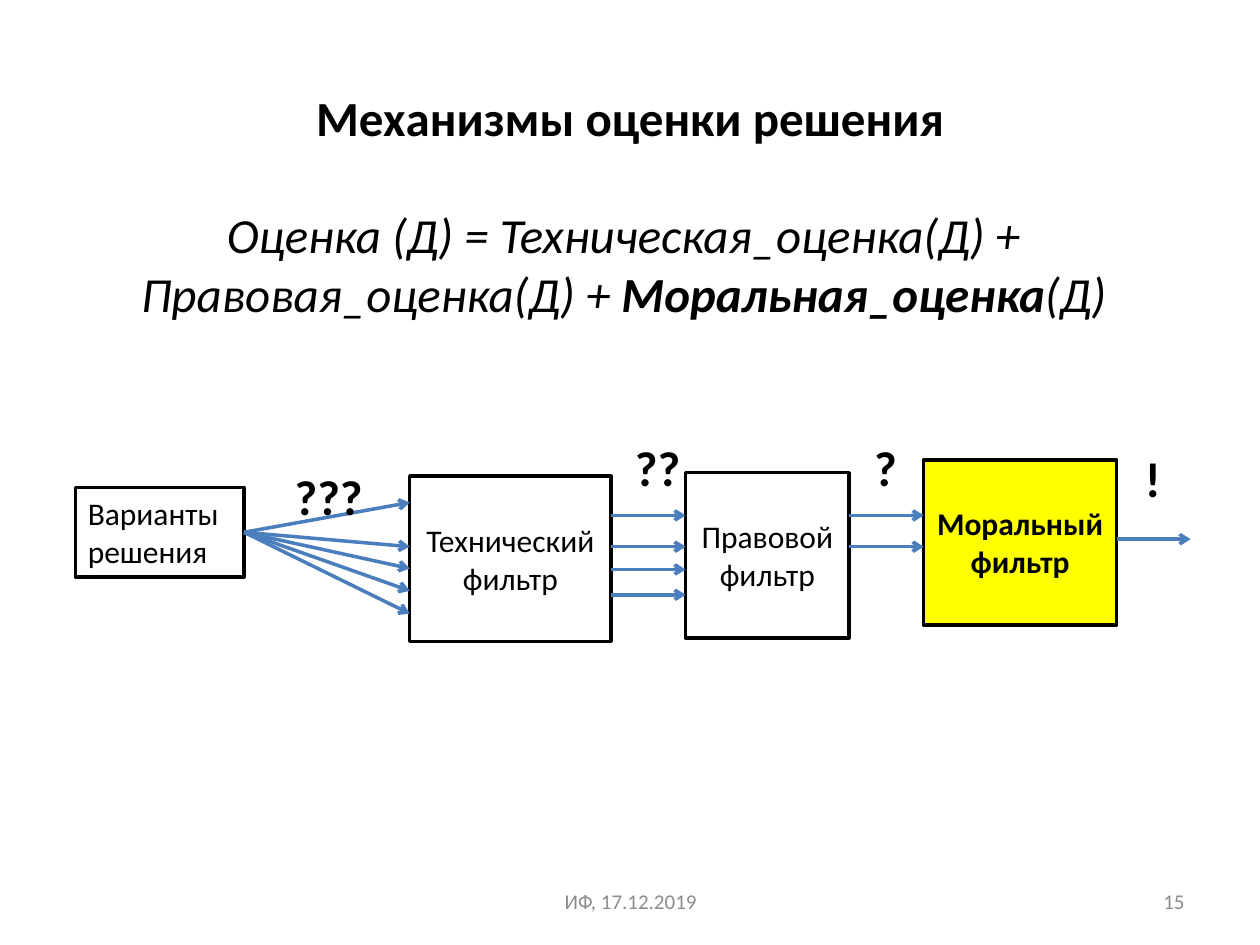
"""Build the slide on the mechanisms of evaluating a decision."""
from lxml.etree import SubElement
from pptx import Presentation
from pptx.dml.color import RGBColor
from pptx.enum.shapes import MSO_CONNECTOR, MSO_SHAPE
from pptx.enum.text import MSO_ANCHOR, PP_ALIGN
from pptx.oxml.ns import qn
from pptx.util import Cm, Pt

BLACK = RGBColor(0x00, 0x00, 0x00)
WHITE = RGBColor(0xFF, 0xFF, 0xFF)
YELLOW = RGBColor(0xFF, 0xFF, 0x00)
BLUE = RGBColor(0x4B, 0x7E, 0xBC)
GRAY = RGBColor(0x8C, 0x8C, 0x8C)


class FilterSlide:
    font = "Calibri"
    line_width = Pt(2)

    def __init__(self, slide):
        self.slide = slide

    def format(self, frame, size, color=BLACK, bold=False, align=PP_ALIGN.CENTER):
        for paragraph in frame.paragraphs:
            paragraph.alignment = align
            for run in paragraph.runs:
                run.font.name = self.font
                run.font.size = Pt(size)
                run.font.bold = bold
                run.font.color.rgb = color

    def place(self, holder, area):
        holder.left, holder.top, holder.width, holder.height = map(Cm, area)

    def title(self, text, area):
        heading = self.slide.shapes.title
        self.place(heading, area)
        heading.text_frame.text = text
        self.format(heading.text_frame, 28, bold=True)

    def formula(self, parts, area):
        body = self.slide.placeholders[1]
        self.place(body, area)
        paragraph = body.text_frame.paragraphs[0]
        for part in parts:
            paragraph.add_run().text = part
        self.format(body.text_frame, 28)
        for run in paragraph.runs:
            run.font.italic = True
        paragraph.runs[1].font.bold = True
        properties = paragraph._p.get_or_add_pPr()
        properties.set("marL", "0")
        properties.set("indent", "0")
        SubElement(properties, qn("a:buNone"))

    def label(self, text, area, size, color=BLACK, bold=False, align=PP_ALIGN.LEFT,
              anchor=MSO_ANCHOR.TOP, wrap=False):
        frame = self.slide.shapes.add_textbox(*map(Cm, area)).text_frame
        frame.word_wrap = wrap
        frame.vertical_anchor = anchor
        frame.text = text
        self.format(frame, size, color, bold, align)

    def box(self, text, area, fill=WHITE, bold=False, align=PP_ALIGN.CENTER,
            side_margin=0.1, top_margin=0.9):
        block = self.slide.shapes.add_shape(MSO_SHAPE.RECTANGLE, *map(Cm, area))
        block.shadow.inherit = False
        block.fill.solid()
        block.fill.fore_color.rgb = fill
        block.line.color.rgb = BLACK
        block.line.width = self.line_width
        frame = block.text_frame
        frame.word_wrap = True
        frame.vertical_anchor = MSO_ANCHOR.TOP
        frame.margin_left = frame.margin_right = Cm(side_margin)
        frame.margin_top = Cm(top_margin)
        frame.text = text
        self.format(frame, 18, bold=bold, align=align)
        return block

    def arrow(self, start, end, source=None):
        flow = self.slide.shapes.add_connector(
            MSO_CONNECTOR.STRAIGHT, *map(Cm, (*start, *end)))
        if source is not None:
            flow.begin_connect(source, 3)
        flow.line.color.rgb = BLUE
        flow.line.width = self.line_width
        SubElement(flow.line._get_or_add_ln(), qn("a:tailEnd"), type="arrow")
        SubElement(flow._element.spPr, qn("a:effectLst"))


def main():
    deck = Presentation()
    deck.slide_width, deck.slide_height = Cm(25.4), Cm(19.05)
    page = FilterSlide(deck.slides.add_slide(deck.slide_layouts[1]))

    page.title("Механизмы оценки решения", (1.27, 0.76, 22.86, 3.18))
    page.formula(("Оценка (Д) = Техническая_оценка(Д) + Правовая_оценка(Д) + ",
                  "Моральная_оценка", "(Д)"), (1.14, 3.99, 22.86, 3.61))
    for text, left, width, align in (("ИФ, 17.12.2019", 8.69, 8.05, PP_ALIGN.CENTER),
                                     ("15", 18.21, 5.92, PP_ALIGN.RIGHT)):
        page.label(text, (left, 17.65, width, 1.02), 12, GRAY, align=align,
                   anchor=MSO_ANCHOR.MIDDLE, wrap=True)

    options = page.box("Варианты решения", (1.52, 9.83, 3.4, 1.8),
                       align=PP_ALIGN.LEFT, side_margin=0.25, top_margin=0.13)
    page.box("Технический фильтр", (8.26, 9.6, 4.06, 3.33))
    page.box("Правовой\nфильтр", (13.82, 9.53, 3.3, 3.33))
    moral = page.box("Моральный\nфильтр", (18.62, 9.27, 3.89, 3.33), YELLOW)
    page.format(moral.text_frame, 18, bold=True)

    for y in (10.13, 11.02, 11.46, 11.91, 12.37):
        page.arrow((4.92, 10.73), (8.26, y), options)
    for left, right, levels in ((12.32, 13.82, (10.39, 11.02, 11.48, 11.99)),
                                (17.12, 18.62, (10.39, 11.02)),
                                (22.51, 24.0, (10.87,))):
        for y in levels:
            page.arrow((left, y), (right, y))

    for mark, left, top, width in (("???", 5.69, 9.27, 1.91), ("??", 12.55, 8.69, 1.45),
                                   ("?", 17.37, 8.69, 0.97), ("!", 22.83, 8.92, 0.84)):
        page.label(mark, (left, top, width, 1.45), 28, bold=True)

    deck.save("out.pptx")


if __name__ == "__main__":
    main()
